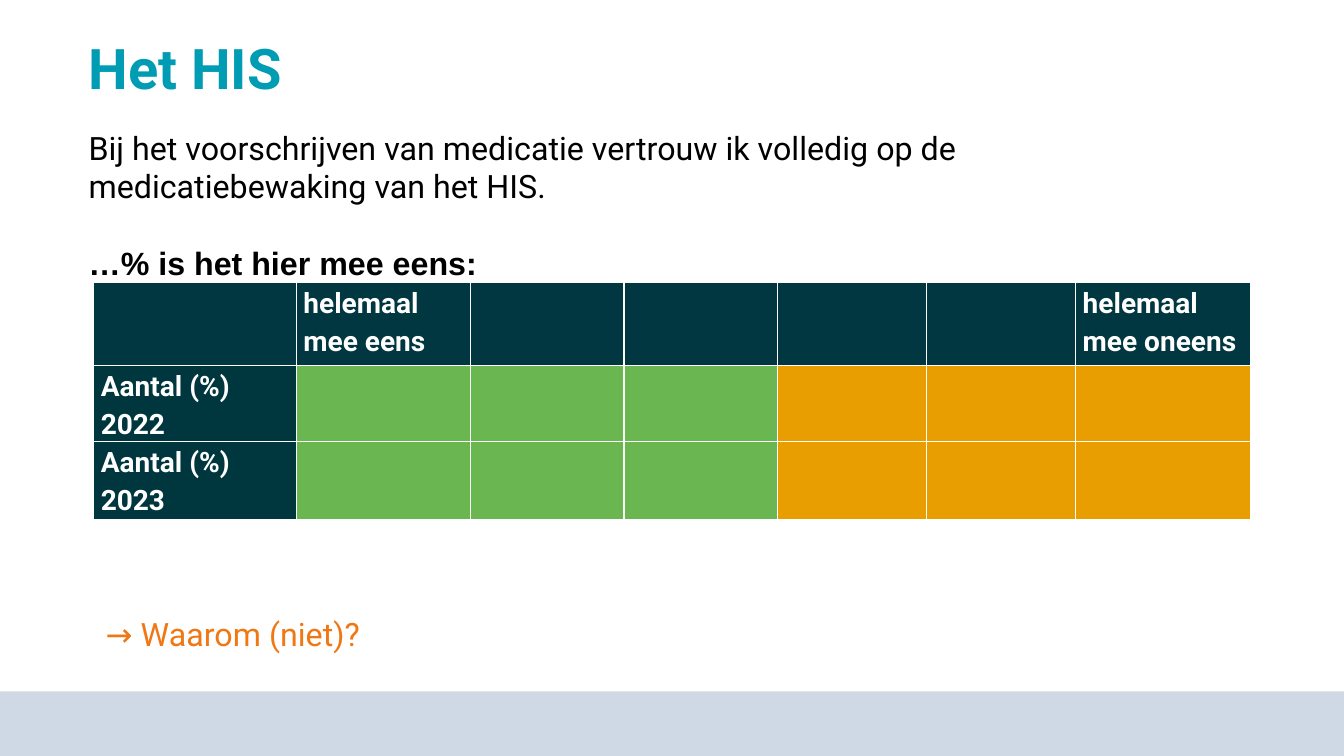
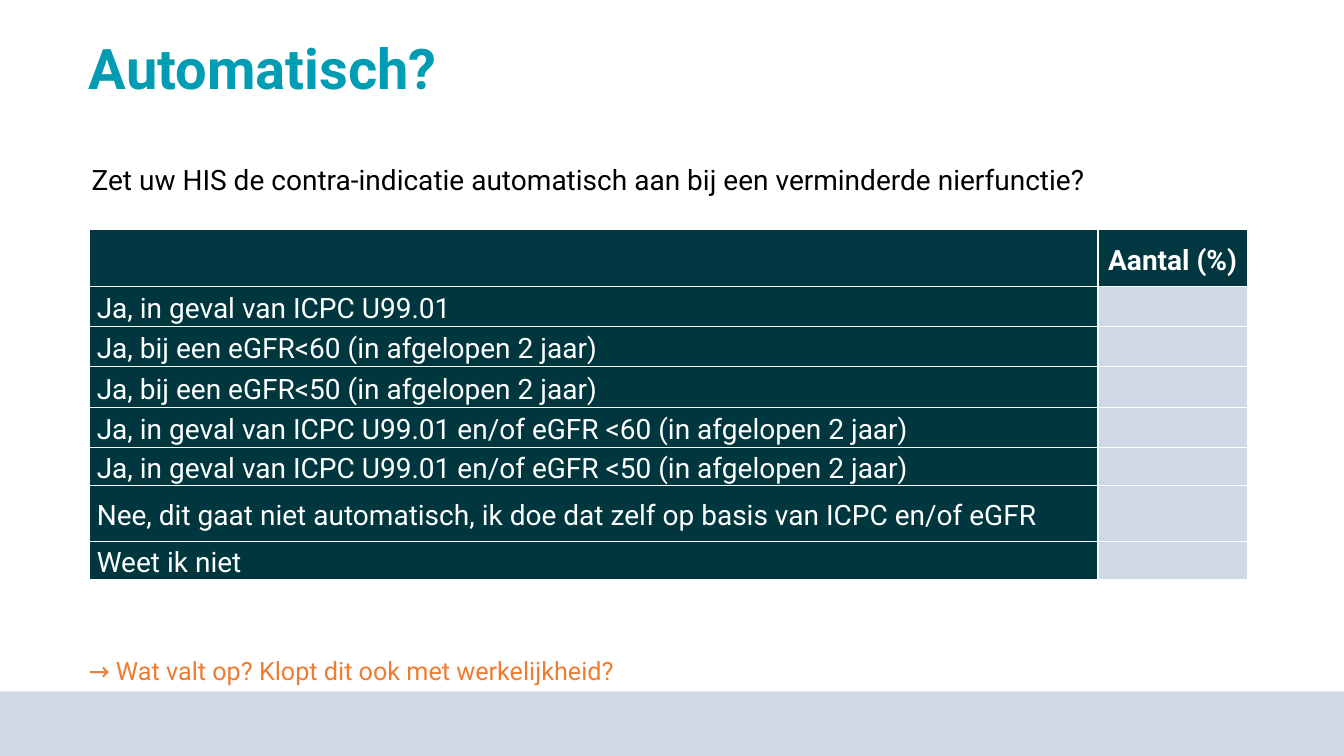
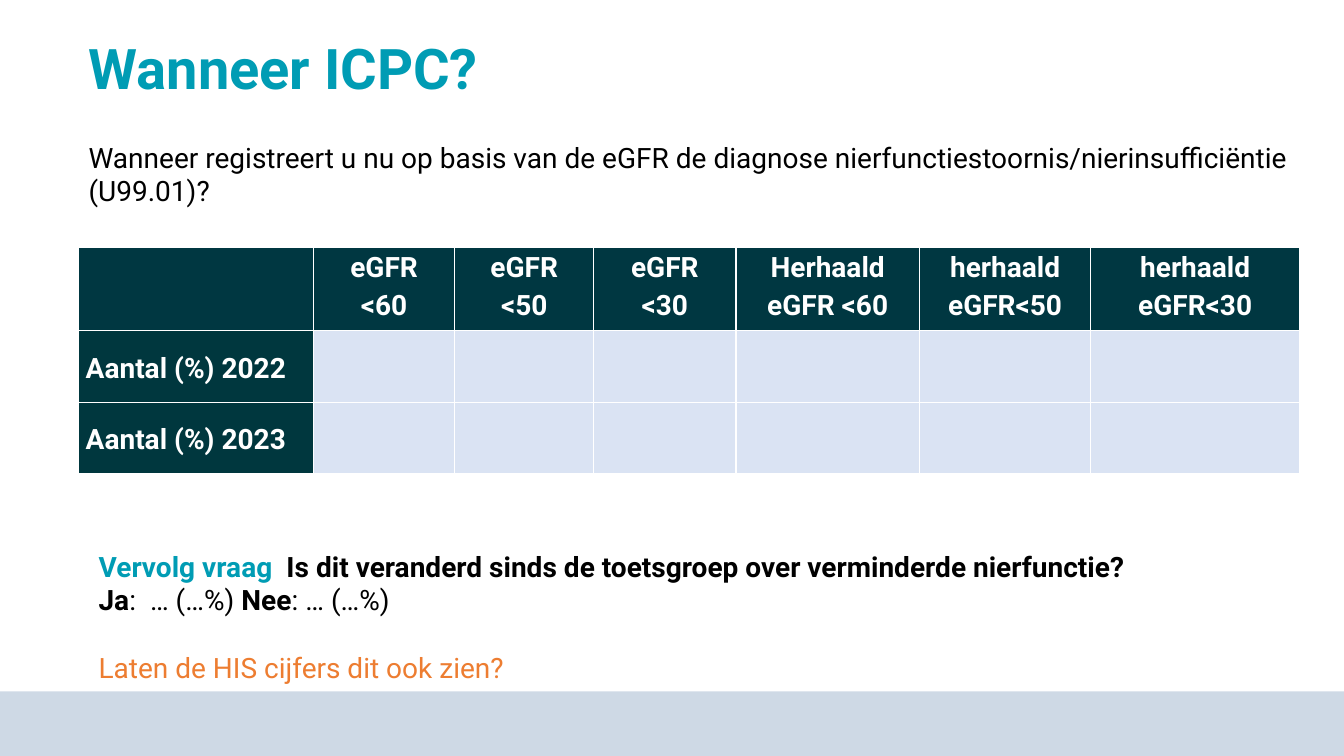
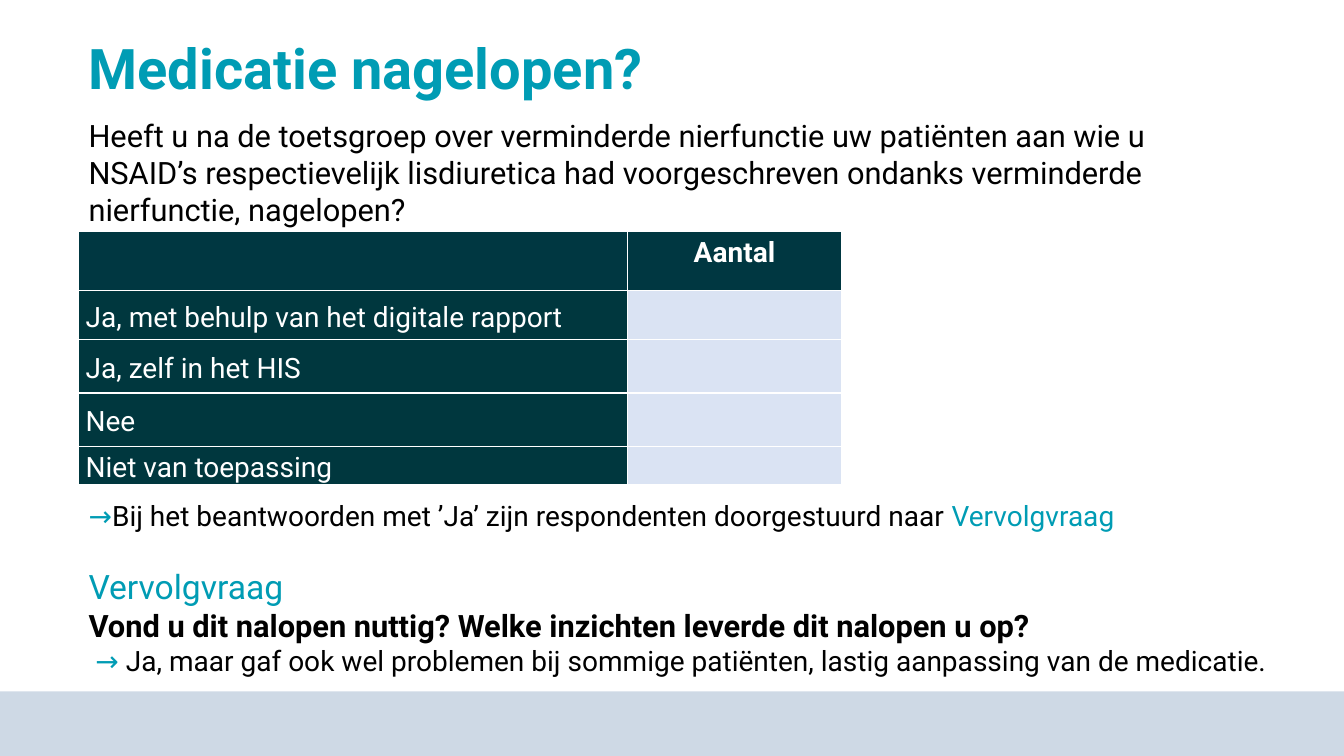
from collections import namedtuple

from pptx import Presentation
from pptx.dml.color import RGBColor
from pptx.enum import shapes, text
from pptx.util import Inches, Pt

COLORS = {
    "teal": "009CB4",
    "header": "003741",
    "label": "00373E",
    "band": "CED9E5",
    "pale": "DAE3F3",
    "green": "6AB650",
    "amber": "E89E00",
    "orange": "F07814",
    "soft_orange": "ED7D31",
    "black": "000000",
    "white": "FFFFFF",
}
TOP, MIDDLE = text.MSO_ANCHOR.TOP, text.MSO_ANCHOR.MIDDLE
LEFT, CENTER = text.PP_ALIGN.LEFT, text.PP_ALIGN.CENTER

Run = namedtuple("Run", "text size color bold font", defaults=[20, "black", False, "Roboto"])
# space_before is in points
Line = namedtuple("Line", "runs space_before", defaults=[0])
Box = namedtuple("Box", "left top width height lines")
Grid = namedtuple(
    "Grid",
    "left top widths heights header labels fills header_align header_anchor label_anchor label_bold",
    defaults=[CENTER, TOP, MIDDLE, False],
)


def rgb(name):
    return RGBColor.from_string(COLORS[name])


def write_lines(frame, lines, align=LEFT, spacing=1.0):
    """Fill a text frame with one paragraph per Line."""
    for index, line in enumerate(lines):
        paragraph = frame.paragraphs[0] if index == 0 else frame.add_paragraph()
        paragraph.alignment = align
        paragraph.line_spacing = spacing
        paragraph.space_before = Pt(line.space_before)
        for part in line.runs:
            run = paragraph.add_run()
            run.text = part.text
            run.font.name = part.font
            run.font.size = Pt(part.size)
            run.font.bold = part.bold
            run.font.color.rgb = rgb(part.color)


SLIDES = [
    (
        "Het HIS",
        Grid(
            0.93, 2.8, [2.01, 1.73, 1.52, 1.52, 1.48, 1.48, 1.73], [0.83, 0.75, 0.77],
            ["", "helemaal mee eens", "", "", "", "", "helemaal mee oneens"],
            ["Aantal (%) 2022", "Aantal (%) 2023"],
            ["green"] * 3 + ["amber"] * 3,
            header_align=LEFT, label_anchor=TOP, label_bold=True,
        ),
        [
            Box(0.78, 1.22, 10.95, 1.6, [
                Line([Run("Bij het voorschrijven van medicatie vertrouw ik volledig op de "
                          "medicatiebewaking van het HIS.", 23)]),
                Line([Run("…% is het hier mee eens:", 23, bold=True, font="Arial")], 27),
            ]),
            Box(0.95, 6.05, 7.89, 0.49, [Line([Run("→ Waarom (niet)?", 23, "orange")])]),
        ],
    ),
    (
        "Automatisch?",
        Grid(
            0.89, 2.28, [10, 1.48], [0.56, 0.4, 0.4, 0.4, 0.4, 0.37, 0.56, 0.37],
            ["", "Aantal (%)"],
            [
                "Ja, in geval van ICPC U99.01",
                "Ja, bij een eGFR<60 (in afgelopen 2 jaar)",
                "Ja, bij een eGFR<50 (in afgelopen 2 jaar)",
                "Ja, in geval van ICPC U99.01 en/of eGFR <60 (in afgelopen 2 jaar)",
                "Ja, in geval van ICPC U99.01 en/of eGFR <50 (in afgelopen 2 jaar)",
                "Nee, dit gaat niet automatisch, ik doe dat zelf op basis van ICPC en/of eGFR",
                "Weet ik niet",
            ],
            ["band"],
            header_anchor=MIDDLE,
        ),
        [
            Box(0.81, 1.56, 12.4, 0.43, [
                Line([Run("Zet uw HIS de contra-indicatie automatisch aan bij een "
                          "verminderde nierfunctie?")]),
            ]),
            Box(0.78, 6.45, 6, 0.4, [
                Line([Run("→ Wat valt op? Klopt dit ook met werkelijkheid?", 18, "soft_orange")]),
            ]),
        ],
    ),
    (
        "Wanneer ICPC?",
        Grid(
            0.78, 2.45, [2.33, 1.4, 1.38, 1.41, 1.82, 1.7, 2.07], [0.83, 0.71, 0.71],
            ["", "eGFR\n<60", "eGFR\n<50", "eGFR\n<30",
             "Herhaald\neGFR <60", "herhaald\neGFR<50", "herhaald\neGFR<30"],
            ["Aantal (%) 2022", "Aantal (%) 2023"],
            ["pale"] * 6,
            label_bold=True,
        ),
        [
            Box(0.78, 1.34, 12.47, 0.76, [
                Line([Run("Wanneer registreert u nu op basis van de eGFR de diagnose "
                          "nierfunctiestoornis/nierinsufficiëntie (U99.01)?")]),
            ]),
            Box(0.88, 5.4, 11.57, 1.42, [
                Line([
                    Run("Vervolg vraag ", color="teal", bold=True),
                    Run(" Is dit veranderd sinds de toetsgroep over verminderde nierfunctie?",
                        bold=True),
                ]),
                Line([Run("Ja", bold=True), Run(":  … (…%) "),
                      Run("Nee", bold=True), Run(": … (…%)")]),
                Line([Run("Laten de HIS cijfers dit ook zien?", color="soft_orange")], 24),
            ]),
        ],
    ),
    (
        "Medicatie nagelopen?",
        Grid(
            0.78, 2.3, [5.44, 2.13], [0.58, 0.49, 0.53, 0.53, 0.37],
            ["", "Aantal"],
            ["Ja, met behulp van het digitale rapport", "Ja, zelf in het HIS",
             "Nee", "Niet van toepassing"],
            ["pale"],
        ),
        [
            Box(0.78, 1.11, 11.81, 1.18, [
                Line([Run("Heeft u na de toetsgroep over verminderde nierfunctie uw patiënten "
                          "aan wie u NSAID’s respectievelijk lisdiuretica had voorgeschreven "
                          "ondanks verminderde nierfunctie, nagelopen?", 22)]),
            ]),
            Box(0.78, 4.9, 12.26, 1.88, [
                Line([
                    Run("→", color="teal"),
                    Run("Bij het beantwoorden met ’Ja’ zijn respondenten doorgestuurd naar "),
                    Run("Vervolgvraag", color="teal"),
                ]),
                Line([Run("Vervolgvraag", 24, "teal")], 24),
                Line([Run("Vond u dit nalopen nuttig? Welke inzichten leverde dit nalopen u op?",
                          22, bold=True)]),
                Line([
                    Run(" → ", color="teal"),
                    Run("Ja, maar gaf ook wel problemen bij sommige patiënten, "
                        "lastig aanpassing van de medicatie."),
                ]),
            ]),
        ],
    ),
]

presentation = Presentation()
presentation.slide_width = Inches(13.33)
presentation.slide_height = Inches(7.5)
title_only = presentation.slide_layouts[5]

for heading, grid, boxes in SLIDES:
    slide = presentation.slides.add_slide(title_only)

    band = slide.shapes.add_shape(
        shapes.MSO_SHAPE.RECTANGLE, 0, Inches(6.86), presentation.slide_width, Inches(0.64))
    band.shadow.inherit = False
    band.fill.solid()
    band.fill.fore_color.rgb = rgb("band")
    band.line.fill.background()

    title = slide.shapes.title
    title.left, title.top = Inches(0.78), Inches(0.36)
    title.width, title.height = Inches(10.68), Inches(0.71)
    title.text_frame.auto_size = text.MSO_AUTO_SIZE.NONE
    title.text_frame.vertical_anchor = TOP
    write_lines(title.text_frame, [Line([Run(heading, 40, "teal", True)])], spacing=0.9)

    table = slide.shapes.add_table(
        len(grid.heights), len(grid.widths), Inches(grid.left), Inches(grid.top),
        Inches(sum(grid.widths)), Inches(sum(grid.heights))).table
    table.horz_banding = False
    for column, width in zip(table.columns, grid.widths):
        column.width = Inches(width)
    for row, height in zip(table.rows, grid.heights):
        row.height = Inches(height)

    contents = [grid.header] + [[label] + [""] * len(grid.fills) for label in grid.labels]
    for row_index, row_texts in enumerate(contents):
        is_header = row_index == 0
        fills = ["header"] * len(row_texts) if is_header else ["label"] + grid.fills
        for column_index, (words, fill) in enumerate(zip(row_texts, fills)):
            cell = table.cell(row_index, column_index)
            cell.fill.solid()
            cell.fill.fore_color.rgb = rgb(fill)
            cell.margin_left = cell.margin_right = Inches(0.07)
            cell.margin_top = cell.margin_bottom = 0
            cell.vertical_anchor = grid.header_anchor if is_header else grid.label_anchor
            if words:
                bold = is_header or grid.label_bold
                lines = [Line([Run(part, color="white", bold=bold)]) for part in words.split("\n")]
                write_lines(cell.text_frame, lines, grid.header_align if is_header else LEFT, 1.15)

    for box in boxes:
        frame = slide.shapes.add_textbox(
            Inches(box.left), Inches(box.top), Inches(box.width), Inches(box.height)).text_frame
        frame.word_wrap = True
        write_lines(frame, box.lines)

presentation.save("out.pptx")
